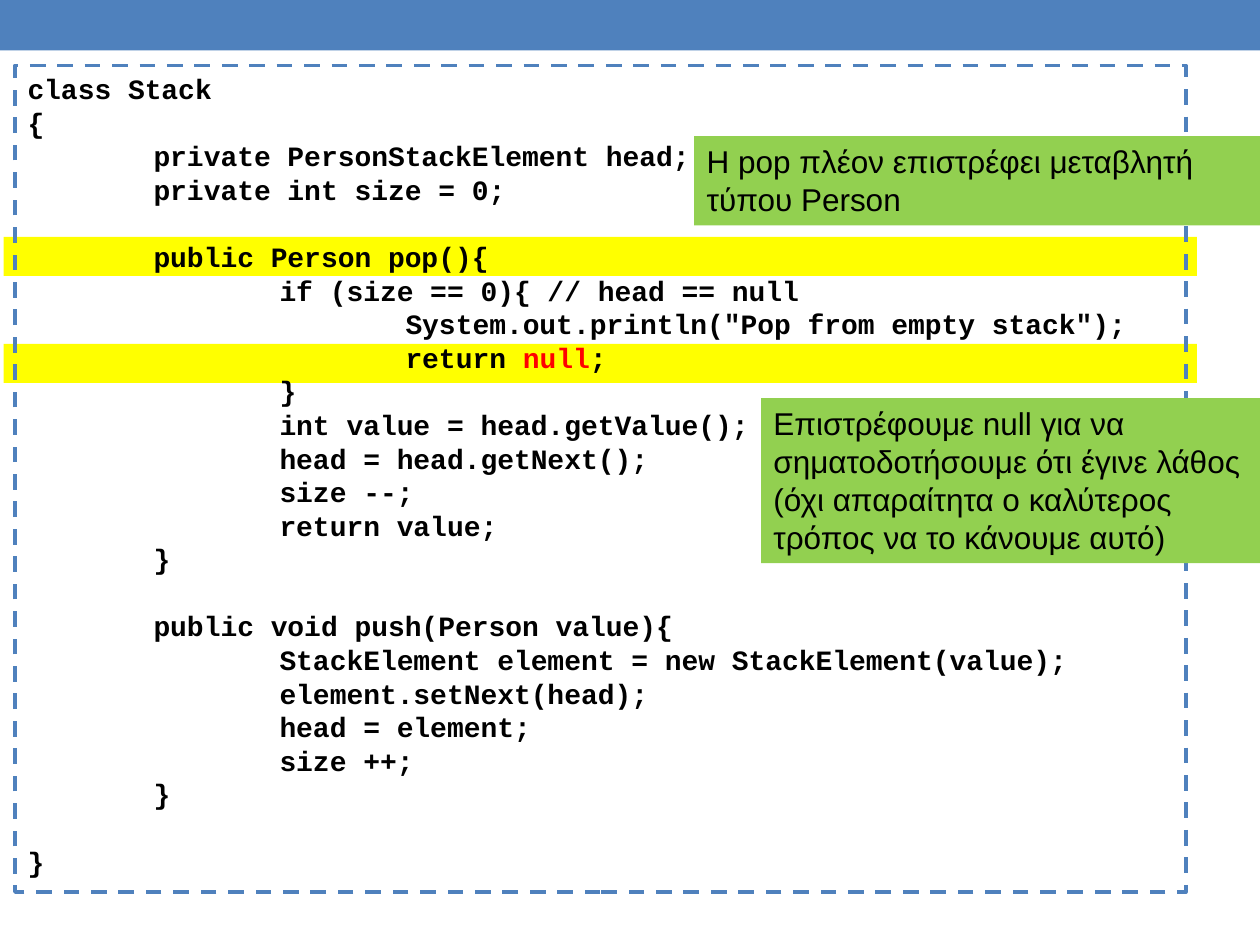
"""Build a slide showing a Stack class whose pop method returns a Person."""
import lxml.etree
import pptx
import pptx.dml.color
import pptx.enum.dml
import pptx.enum.shapes
import pptx.enum.text
import pptx.oxml.ns
import pptx.util
from pptx.util import Inches

COLORS = {
    "blue": "4F81BD",
    "yellow": "FFFF00",
    "green": "92D050",
    "black": "000000",
    "red": "FF0000",
}

STACK_CODE = """class Stack
{
\tprivate PersonStackElement head;
\tprivate int size = 0;

\tpublic Person pop(){
\t\tif (size == 0){ // head == null
\t\t\tSystem.out.println("Pop from empty stack");
\t\t\treturn null;
\t\t}
\t\tint value = head.getValue();
\t\thead = head.getNext();
\t\tsize --;
\t\treturn value;
\t}

\tpublic void push(Person value){
\t\tStackElement element = new StackElement(value);
\t\telement.setNext(head);
\t\thead = element;
\t\tsize ++;
\t}

}"""

POP_NOTE = "H pop πλέον επιστρέφει μεταβλητή τύπου Person"
NULL_NOTE = (
    "Επιστρέφουμε null για να σηματοδοτήσουμε ότι έγινε λάθος "
    "(όχι απαραίτητα ο καλύτερος τρόπος να το κάνουμε αυτό)"
)


class SlideBuilder:
    """Holds the style and the current slide."""

    code_font, code_size = "Courier New", 16
    note_font, note_size = "Arial", 18
    line_pitch = pptx.util.Pt(19.2)

    def __init__(self, slide):
        """Keep the slide that receives the elements."""
        self.slide = slide

    def color(self, name):
        """Return the named colour."""
        return pptx.dml.color.RGBColor.from_string(COLORS[name])

    def box(self, left, top, width, height, fill=None):
        """Add a rectangle without outline, filled when a colour is given."""
        rectangle = self.slide.shapes.add_shape(
            pptx.enum.shapes.MSO_SHAPE.RECTANGLE,
            Inches(left), Inches(top), Inches(width), Inches(height))
        rectangle.shadow.inherit = False
        rectangle.line.fill.background()
        if fill:
            rectangle.fill.solid()
            rectangle.fill.fore_color.rgb = self.color(fill)
        else:
            rectangle.fill.background()
        return rectangle

    def style(self, run, font, size, bold=False, color="black"):
        """Format one run."""
        run.font.name = font
        run.font.size = pptx.util.Pt(size)
        run.font.bold = bold
        run.font.color.rgb = self.color(color)

    def tab_stops(self, paragraph):
        """Set a tab stop at each inch of code indent."""
        qn = pptx.oxml.ns.qn
        properties = paragraph._p.get_or_add_pPr()
        stops = lxml.etree.SubElement(properties, qn("a:tabLst"))
        for inch in (1, 2, 3):
            lxml.etree.SubElement(
                stops, qn("a:tab"), pos=str(Inches(inch)), algn="l")

    def note(self, text, left, top, width, height):
        """Add a green remark."""
        remark = self.box(left, top, width, height, "green")
        frame = remark.text_frame
        frame.word_wrap = True
        frame.vertical_anchor = pptx.enum.text.MSO_ANCHOR.TOP
        frame.text = text
        paragraph = frame.paragraphs[0]
        paragraph.alignment = pptx.enum.text.PP_ALIGN.LEFT
        self.style(paragraph.runs[0], self.note_font, self.note_size)

    def code(self, text, highlight, left, top, width, height):
        """Add a dashed listing with one highlighted word."""
        listing = self.box(left, top, width, height)
        listing.line.color.rgb = self.color("blue")
        listing.line.width = pptx.util.Pt(2.25)
        listing.line.dash_style = pptx.enum.dml.MSO_LINE.DASH
        frame = listing.text_frame
        frame.word_wrap = True
        frame.vertical_anchor = pptx.enum.text.MSO_ANCHOR.TOP
        blocks = text.split("\n\n")
        frame.text = "\n".join(blocks)
        block_starts = {block.split("\n")[0] for block in blocks[1:]}
        for paragraph in frame.paragraphs:
            paragraph.alignment = pptx.enum.text.PP_ALIGN.LEFT
            paragraph.line_spacing = self.line_pitch
            line = paragraph.text
            if line in block_starts:
                paragraph.space_before = self.line_pitch
            self.tab_stops(paragraph)
            if line.endswith(highlight + ";"):
                paragraph.runs[0].text = line[:-len(highlight) - 1]
                for part in (highlight, ";"):
                    paragraph.add_run().text = part
            for run in paragraph.runs:
                color = "red" if run.text == highlight else "black"
                self.style(run, self.code_font, self.code_size, True, color)


def main():
    """Build and save the presentation."""
    presentation = pptx.Presentation()
    presentation.slide_width = Inches(10)
    presentation.slide_height = Inches(7.5)
    blank_layout = presentation.slide_layouts[6]
    builder = SlideBuilder(presentation.slides.add_slide(blank_layout))

    builder.box(0, 0, 10, 0.4, "blue")
    for marked_line_top in (2.73, 1.88):
        builder.box(0.03, marked_line_top, 9.47, 0.31, "yellow")
    builder.code(STACK_CODE, "null", 0.12, 0.52, 9.29, 6.56)
    builder.note(POP_NOTE, 5.51, 1.08, 4.49, 0.71)
    builder.note(NULL_NOTE, 6.04, 3.16, 3.96, 1.31)
    presentation.save("out.pptx")


if __name__ == "__main__":
    main()
